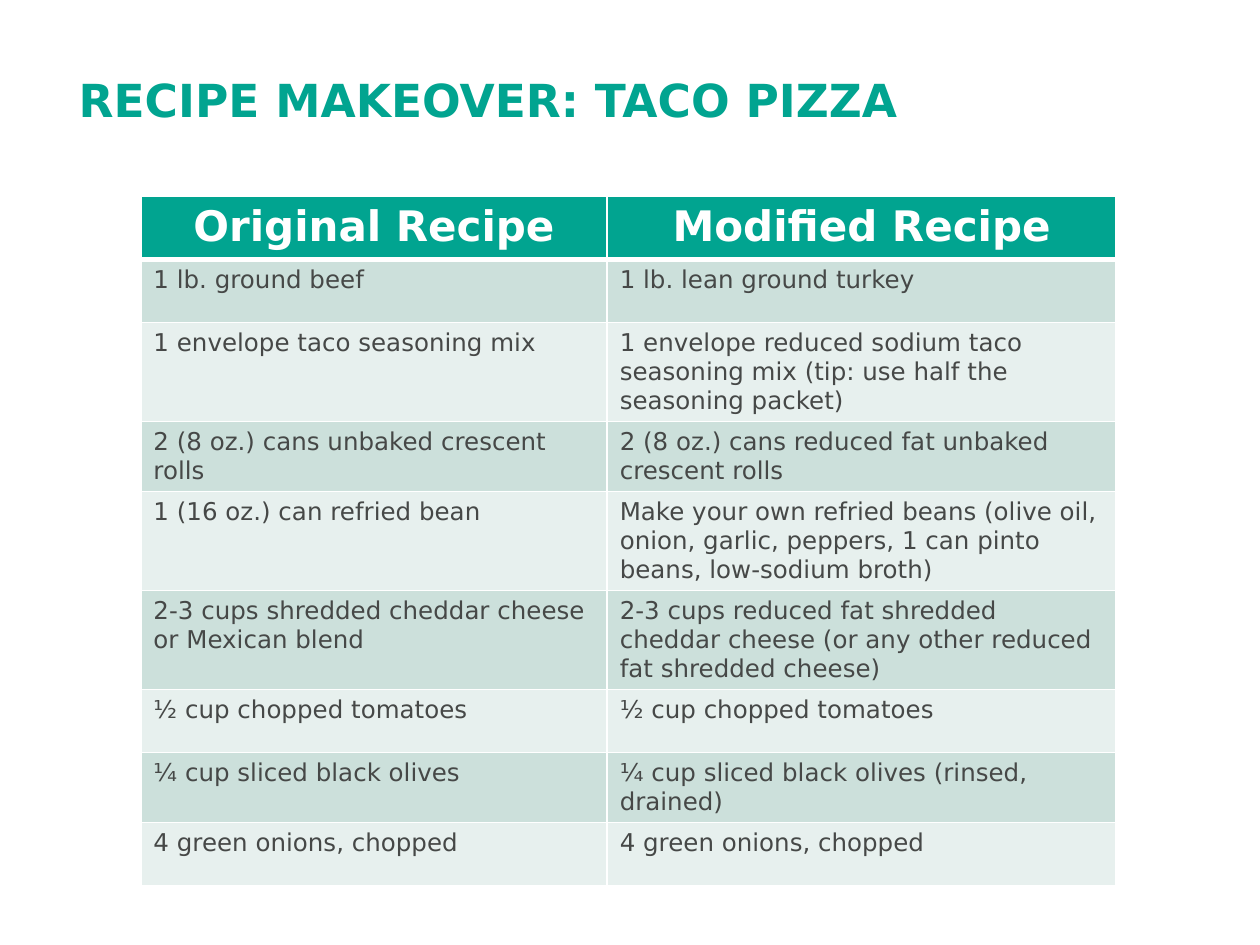
from lxml.etree import SubElement
from pptx import Presentation
from pptx.dml.color import RGBColor
from pptx.enum.text import MSO_ANCHOR, PP_ALIGN
from pptx.oxml.ns import qn
from pptx.util import Cm, Pt

FONT = "DejaVu Sans"
TEAL, WHITE, GRAY = "01A490", "FFFFFF", "464847"
BANDS = ("CCE0DB", "E7F0EE")

TITLE = "RECIPE MAKEOVER: TACO PIZZA"
HEADINGS = ("Original Recipe", "Modified Recipe")
INGREDIENTS = [
    ("1 lb. ground beef", "1 lb. lean ground turkey"),
    ("1 envelope taco seasoning mix",
     "1 envelope reduced sodium taco seasoning mix (tip: use half the seasoning packet)"),
    ("2 (8 oz.) cans unbaked crescent rolls",
     "2 (8 oz.) cans reduced fat unbaked crescent rolls"),
    ("1 (16 oz.) can refried bean",
     "Make your own refried beans (olive oil, onion, garlic, peppers, "
     "1 can pinto beans, low-sodium broth)"),
    ("2-3 cups shredded cheddar cheese or Mexican blend",
     "2-3 cups reduced fat shredded cheddar cheese (or any other reduced fat shredded cheese)"),
    ("½ cup chopped tomatoes", "½ cup chopped tomatoes"),
    ("¼ cup sliced black olives", "¼ cup sliced black olives (rinsed, drained)"),
    ("4 green onions, chopped", "4 green onions, chopped"),
]
COLUMN_WIDTHS = (9.4, 10.26)
ROW_HEIGHT = 1.27


def color(value):
    return RGBColor.from_string(value)


def format_text(text_frame, size, text_color, bold, alignment):
    for paragraph in text_frame.paragraphs:
        paragraph.alignment = alignment
        for run in paragraph.runs:
            run.font.name = FONT
            run.font.size = Pt(size)
            run.font.bold = bold
            run.font.color.rgb = color(text_color)


def set_borders(cell, widths):
    properties = cell._tc.get_or_add_tcPr()
    for side, width in zip(("lnL", "lnR", "lnT", "lnB"), widths):
        line = SubElement(properties, qn(f"a:{side}"), w=str(Pt(width)))
        fill = SubElement(line, qn("a:solidFill"))
        SubElement(fill, qn("a:srgbClr"), val=WHITE)


def add_title(slide):
    title = slide.shapes.title
    title.left, title.top, title.width, title.height = Cm(1.33), Cm(1.33), Cm(23.27), Cm(2.34)
    title.text_frame.text = TITLE
    title.text_frame.vertical_anchor = MSO_ANCHOR.TOP
    format_text(title.text_frame, 26, TEAL, True, PP_ALIGN.LEFT)


def add_recipe_table(slide):
    rows = [HEADINGS, *INGREDIENTS]
    table = slide.shapes.add_table(
        len(rows), len(HEADINGS), Cm(2.84), Cm(3.96),
        Cm(sum(COLUMN_WIDTHS)), Cm(ROW_HEIGHT * len(rows))).table
    for column, width in zip(table.columns, COLUMN_WIDTHS):
        column.width = Cm(width)
    for row_index, texts in enumerate(rows):
        table.rows[row_index].height = Cm(ROW_HEIGHT)
        is_header = row_index == 0
        top = 3 if row_index == 1 else 1
        bottom = 3 if is_header else 1
        for column_index, text in enumerate(texts):
            cell = table.cell(row_index, column_index)
            cell.text_frame.text = text
            set_borders(cell, (1, 1, top, bottom))
            cell.fill.solid()
            cell.fill.fore_color.rgb = color(TEAL if is_header else BANDS[(row_index - 1) % 2])
            if is_header:
                format_text(cell.text_frame, 24, WHITE, True, PP_ALIGN.CENTER)
            else:
                format_text(cell.text_frame, 14, GRAY, False, PP_ALIGN.LEFT)


def main():
    presentation = Presentation()
    presentation.slide_width, presentation.slide_height = Cm(25.4), Cm(19.05)
    slide = presentation.slides.add_slide(presentation.slide_layouts[5])
    add_title(slide)
    add_recipe_table(slide)
    presentation.save("out.pptx")


if __name__ == "__main__":
    main()
